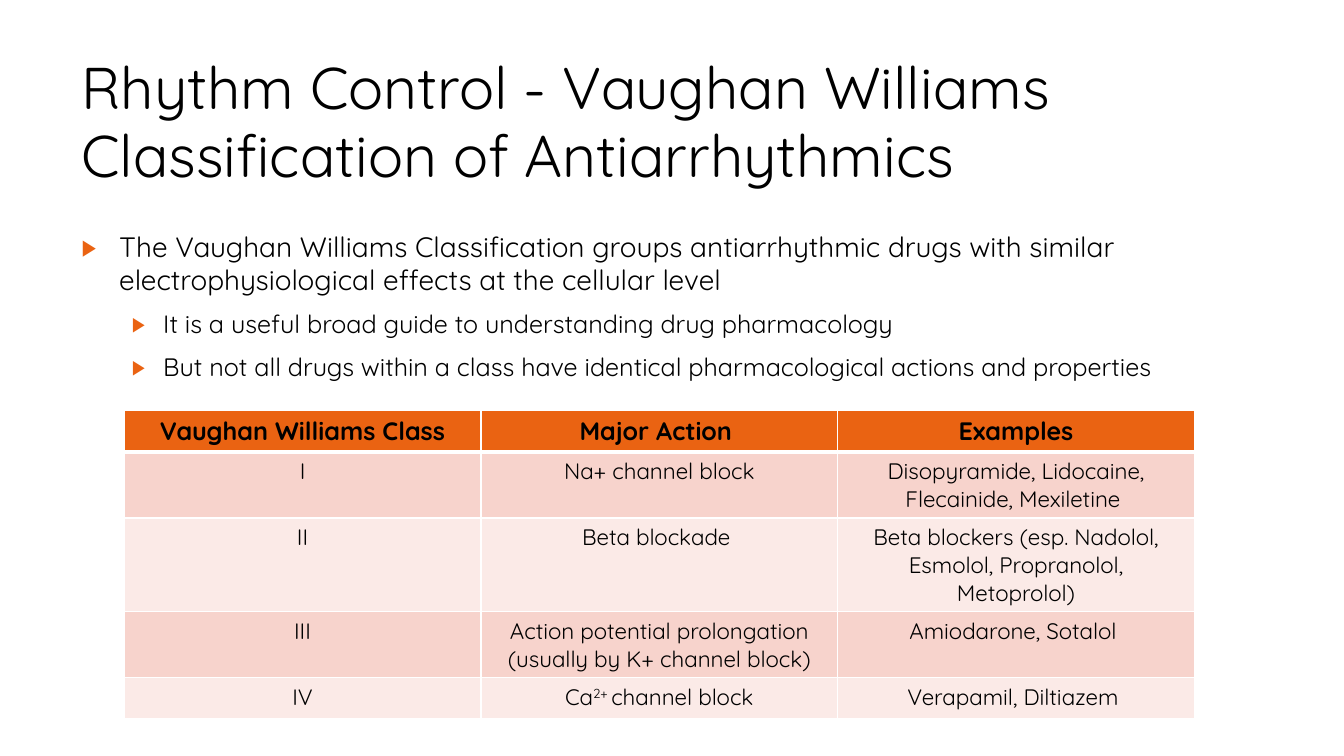
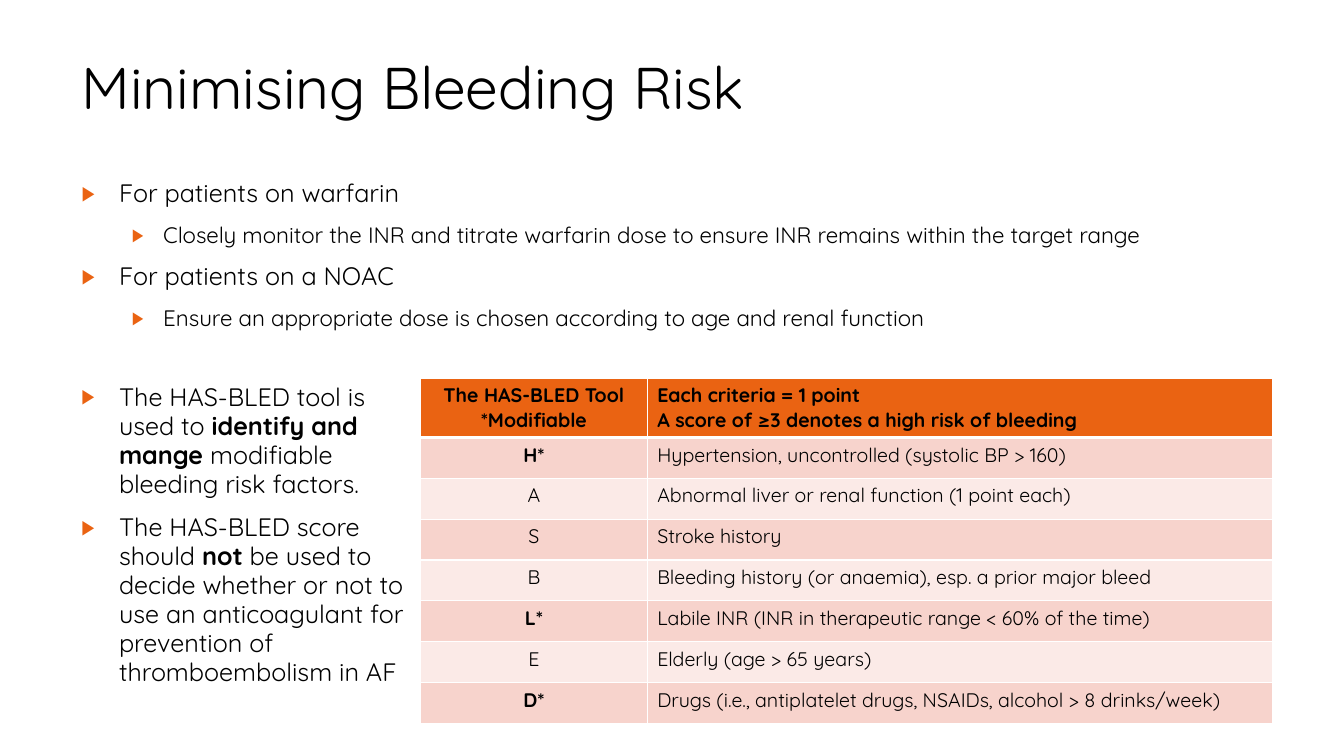
from collections import namedtuple
from dataclasses import dataclass

from lxml.etree import SubElement
from pptx import Presentation
from pptx.dml.color import RGBColor as Color
from pptx.enum.text import MSO_ANCHOR as Anchor, MSO_AUTO_SIZE as AutoSize, PP_ALIGN as Align
from pptx.oxml.ns import qn
from pptx.util import Cm, Pt


@dataclass(frozen=True)
class Theme:
    font: str = "Quicksand"
    ink: str = "000000"
    accent: str = "EA6312"
    line: str = "FFFFFF"
    bands: tuple = ("F7D3CC", "FBEAE7")
    title: int = 42
    large: int = 20
    medium: int = 18
    small: int = 16
    compact: int = 14
    leading: float = 0.96
    gap: int = 10


Box = namedtuple("Box", "left top width height")
Item = namedtuple("Item", "level content")

THEME = Theme()
TITLE_BOX = Box(1.8, 1.27, 26.14, 3.89)
LEVELS = ((0.95, 0.95), (2.06, 0.79))  # left margin and hanging indent
CENTER, LEFT = Align.CENTER, Align.LEFT


def lengths(box):
    return [Cm(value) for value in box]


def write(para, content, size, bold=False, align=LEFT):
    """Fill a paragraph from a string or a list of strings and (text, style) pairs."""
    para.alignment = align
    for piece in [content] if isinstance(content, str) else content:
        text, style = (piece, "") if isinstance(piece, str) else piece
        span = para.add_run()
        span.text = text
        font = span.font
        font.name, font.size = THEME.font, Pt(size)
        font.color.rgb = Color.from_string(THEME.ink)
        font.bold = bold or style == "bold"
        if style == "super":
            span._r.get_or_add_rPr().set("baseline", "30000")


def paragraphs(frame, contents):
    """Yield each content with its paragraph, starting with the frame's own."""
    for index, content in enumerate(contents):
        yield (frame.add_paragraph() if index else frame.paragraphs[0]), content


def place(shape, box):
    shape.left, shape.top, shape.width, shape.height = lengths(box)
    frame = shape.text_frame
    frame.word_wrap = True
    frame.auto_size = AutoSize.NONE
    frame.vertical_anchor = Anchor.TOP
    return frame


def add_bullet(para, level):
    margin, hang = LEVELS[level]
    para.level = level
    props = para._p.get_or_add_pPr()
    props.set("marL", str(Cm(margin)))
    props.set("indent", str(-Cm(hang)))
    SubElement(SubElement(props, qn("a:buClr")), qn("a:srgbClr"), val=THEME.accent)
    SubElement(props, qn("a:buSzPct"), val="80000")
    SubElement(props, qn("a:buFont"), typeface="Arial")
    SubElement(props, qn("a:buChar"), char="▶")


def fill_list(shape, box, items, sizes):
    frame = place(shape, box)
    for index, (para, item) in enumerate(paragraphs(frame, items)):
        add_bullet(para, item.level)
        para.space_before = Pt(THEME.gap if index else 0)
        para.line_spacing = THEME.leading
        write(para, item.content, sizes[item.level])


def add_page(deck, title):
    page = deck.slides.add_slide(deck.slide_layouts[1])
    para = place(page.shapes.title, TITLE_BOX).paragraphs[0]
    para.line_spacing = THEME.leading
    write(para, title, THEME.title)
    return page


def set_borders(cell, bottom):
    props = cell._tc.get_or_add_tcPr()
    for side, width in (("L", 1), ("R", 1), ("T", 1), ("B", bottom)):
        edge = SubElement(props, qn(f"a:ln{side}"), w=str(Pt(width)))
        SubElement(SubElement(edge, qn("a:solidFill")), qn("a:srgbClr"), val=THEME.line)


def add_table(page, box, rows, widths, heights, aligns, header_size, size):
    """Add a banded table; a cell given as a tuple holds several paragraphs."""
    frame = page.shapes.add_table(len(rows), len(widths), *lengths(box))
    table = frame.table
    table.horz_banding = False
    for column, width in zip(table.columns, widths):
        column.width = Cm(width)
    for index, (row, height) in enumerate(zip(rows, heights)):
        header = index == 0
        table.rows[index].height = Cm(height)
        fill = THEME.accent if header else THEME.bands[(index - 1) % 2]
        for cell, content, align in zip(table.rows[index].cells, row, aligns):
            set_borders(cell, bottom=3 if header else 1)
            cell.fill.solid()
            cell.fill.fore_color.rgb = Color.from_string(fill)
            cell.vertical_anchor = Anchor.MIDDLE if header else Anchor.TOP
            contents = content if isinstance(content, tuple) else (content,)
            for para, text in paragraphs(cell.text_frame, contents):
                write(para, text, header_size if header else size, bold=header, align=align)


def build_classification(deck):
    page = add_page(deck, "Rhythm Control - Vaughan Williams Classification of Antiarrhythmics")
    fill_list(page.placeholders[1], Box(1.8, 5.72, 29.67, 11.66), [
        Item(0, "The Vaughan Williams Classification groups antiarrhythmic drugs with similar "
                "electrophysiological effects at the cellular level"),
        Item(1, "It is a useful broad guide to understanding drug pharmacology"),
        Item(1, "But not all drugs within a class have identical pharmacological actions "
                "and properties"),
    ], sizes=(THEME.large, THEME.medium))
    rows = [
        ("Vaughan Williams Class", "Major Action ", "Examples"),
        ("I", "Na+ channel block", "Disopyramide, Lidocaine, Flecainide, Mexiletine "),
        ("II", "Beta blockade ", "Beta blockers (esp. Nadolol, Esmolol, Propranolol, Metoprolol)"),
        ("III", "Action potential prolongation (usually by K+ channel block)",
         "Amiodarone, Sotalol "),
        ("IV", ["Ca", ("2+ ", "super"), "channel block"], "Verapamil, Diltiazem "),
    ]
    add_table(page, Box(3.13, 10.34, 26.97, 7.72), rows, widths=[8.99] * 3,
              heights=[1.02, 1.66, 2.36, 1.66, 1.02], aligns=[CENTER] * 3,
              header_size=THEME.medium, size=THEME.small)


def build_bleeding_risk(deck):
    page = add_page(deck, "Minimising Bleeding Risk")
    sizes = (THEME.medium, THEME.small)
    fill_list(page.placeholders[1], Box(1.8, 4.4, 30.28, 5.13), [
        Item(0, "For patients on warfarin"),
        Item(1, "Closely monitor the INR and titrate warfarin dose to ensure INR remains "
                "within the target range"),
        Item(0, "For patients on a NOAC"),
        Item(1, "Ensure an appropriate dose is chosen according to age and renal function"),
    ], sizes)
    rows = [
        (("The HAS-BLED Tool", "*Modifiable"),
         ("Each criteria = 1 point", "A score of ≥3 denotes a high risk of bleeding")),
        ([("H*", "bold")], "Hypertension, uncontrolled (systolic BP > 160)"),
        ("A", "Abnormal liver or renal function (1 point each)"),
        ("S", "Stroke history"),
        ("B", "Bleeding history (or anaemia), esp. a prior major bleed"),
        ([("L*", "bold")], "Labile INR (INR in therapeutic range < 60% of the time)"),
        ("E", "Elderly (age > 65 years)"),
        ([("D*", "bold")], "Drugs (i.e., antiplatelet drugs, NSAIDs, alcohol > 8 drinks/week)"),
    ]
    add_table(page, Box(10.6, 9.53, 21.48, 8.66), rows, widths=[5.71, 15.77],
              heights=[1.45] + [1.03] * 7, aligns=[CENTER, LEFT],
              header_size=THEME.compact, size=THEME.compact)
    advice = Box(1.8, 9.53, 8.79, 8.66)
    fill_list(page.shapes.add_textbox(*lengths(advice)), advice, [
        Item(0, ["The HAS-BLED tool is used to", (" identify and mange ", "bold"),
                 "modifiable bleeding risk factors."]),
        Item(0, ["The HAS-BLED score should ", ("not", "bold"),
                 " be used to decide whether or not to use an anticoagulant for prevention "
                 "of thromboembolism in AF"]),
    ], sizes)


def main():
    deck = Presentation()
    deck.slide_width, deck.slide_height = Cm(33.87), Cm(19.05)
    build_classification(deck)
    build_bleeding_risk(deck)
    deck.save("out.pptx")


if __name__ == "__main__":
    main()
